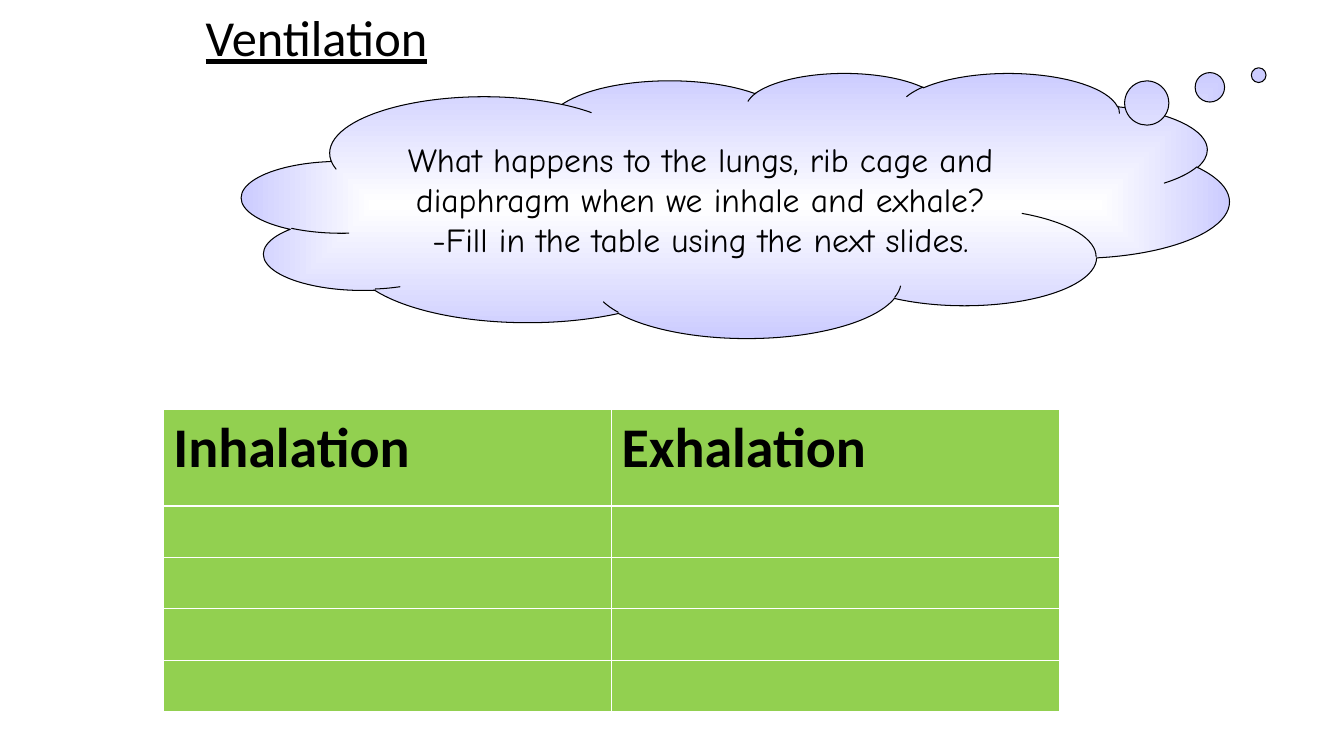
from dataclasses import dataclass

from lxml import etree
from pptx import Presentation
from pptx.dml.color import RGBColor
from pptx.enum.shapes import MSO_SHAPE
from pptx.enum.text import MSO_ANCHOR, MSO_AUTO_SIZE, PP_ALIGN
from pptx.oxml.ns import qn
from pptx.util import Inches, Pt

CLOUD = MSO_SHAPE.CLOUD_CALLOUT
CENTER, LEFT = PP_ALIGN.CENTER, PP_ALIGN.LEFT
TOP, MIDDLE = MSO_ANCHOR.TOP, MSO_ANCHOR.MIDDLE
NO_AUTOFIT = MSO_AUTO_SIZE.NONE
TITLE_ONLY = 5


@dataclass(frozen=True)
class Theme:
    """Colours, fonts and type sizes of the slide."""
    ink: RGBColor = RGBColor.from_string("000000")
    cloud_core: RGBColor = RGBColor.from_string("FFFFFF")
    cloud_edge: RGBColor = RGBColor.from_string("CCCCFF")
    cell: RGBColor = RGBColor.from_string("92D050")
    font: str = "Calibri"
    question_font: str = "Comic Neue"
    title_size: int = 36
    question_size: int = 24
    header_size: int = 40


THEME = Theme()


def write_text(frame, text, *, size, font=THEME.font, align=LEFT, anchor=TOP,
               bold=False, underline=False):
    """Write the lines of text as formatted paragraphs."""
    frame.word_wrap = True
    frame.vertical_anchor = anchor
    frame.text = text
    for paragraph in frame.paragraphs:
        paragraph.alignment = align
        for run in paragraph.runs:
            run.font.name = font
            run.font.size = Pt(size)
            run.font.bold = bold
            run.font.underline = underline
            run.font.color.rgb = THEME.ink


def place_title(slide, text, left, top, width, height):
    """Move the title placeholder and fill it with underlined text."""
    title = slide.shapes.title
    title.left, title.top = Inches(left), Inches(top)
    title.width, title.height = Inches(width), Inches(height)
    write_text(title.text_frame, text, size=THEME.title_size, align=CENTER,
               underline=True)
    title.text_frame.auto_size = NO_AUTOFIT


def fill_from_center(shape, core, edge):
    """Fill a shape with a rectangular gradient from its centre."""
    shape.fill.gradient()
    for stop, position, color in zip(shape.fill.gradient_stops, (0, 1), (core, edge)):
        stop.position = position
        stop.color.rgb = color
    gradient = shape._element.spPr.find(qn("a:gradFill"))
    gradient.remove(gradient.find(qn("a:lin")))
    spread = etree.SubElement(gradient, qn("a:path"), path="rect")
    etree.SubElement(spread, qn("a:fillToRect"),
                     {side: "50000" for side in "ltrb"})


def add_thought_cloud(slide, text, left, top, width, height, tail):
    """Add a thought cloud whose bubbles lead towards tail."""
    cloud = slide.shapes.add_shape(CLOUD, Inches(left), Inches(top),
                                   Inches(width), Inches(height))
    cloud.shadow.inherit = False
    cloud.adjustments[0], cloud.adjustments[1] = tail
    fill_from_center(cloud, THEME.cloud_core, THEME.cloud_edge)
    cloud.line.color.rgb = THEME.ink
    cloud.line.width = Pt(0.75)
    write_text(cloud.text_frame, text, size=THEME.question_size,
               font=THEME.question_font, align=CENTER, anchor=MIDDLE)


def add_answer_table(slide, headers, blank_rows, left, top, width,
                     header_height, row_height):
    """Add a table with headers above blank rows for answers."""
    height = header_height + blank_rows * row_height
    table = slide.shapes.add_table(blank_rows + 1, len(headers), Inches(left),
                                   Inches(top), Inches(width), Inches(height)).table
    table.horz_banding = False
    for index, row in enumerate(table.rows):
        row.height = Inches(row_height if index else header_height)
    for cell in table.iter_cells():
        cell.fill.solid()
        cell.fill.fore_color.rgb = THEME.cell
    for cell, header in zip(table.rows[0].cells, headers):
        write_text(cell.text_frame, header, size=THEME.header_size, bold=True)


def main():
    """Build the ventilation slide."""
    deck = Presentation()
    deck.slide_width, deck.slide_height = Inches(13.33), Inches(7.5)
    slide = deck.slides.add_slide(deck.slide_layouts[TITLE_ONLY])
    add_answer_table(slide, ("Inhalation", "Exhalation"), 4, 1.62, 4.06, 8.89,
                     header_height=0.96, row_height=0.51)
    add_thought_cloud(slide,
                      "What happens to the lungs, rib cage and diaphragm "
                      "when we inhale and exhale?\n"
                      "-Fill in the table using the next slides.",
                      2.4, 0.72, 9.79, 2.63, tail=(0.53, -0.49))
    place_title(slide, "Ventilation", 0.09, 0.01, 6.1, 0.71)
    deck.save("out.pptx")


if __name__ == "__main__":
    main()
